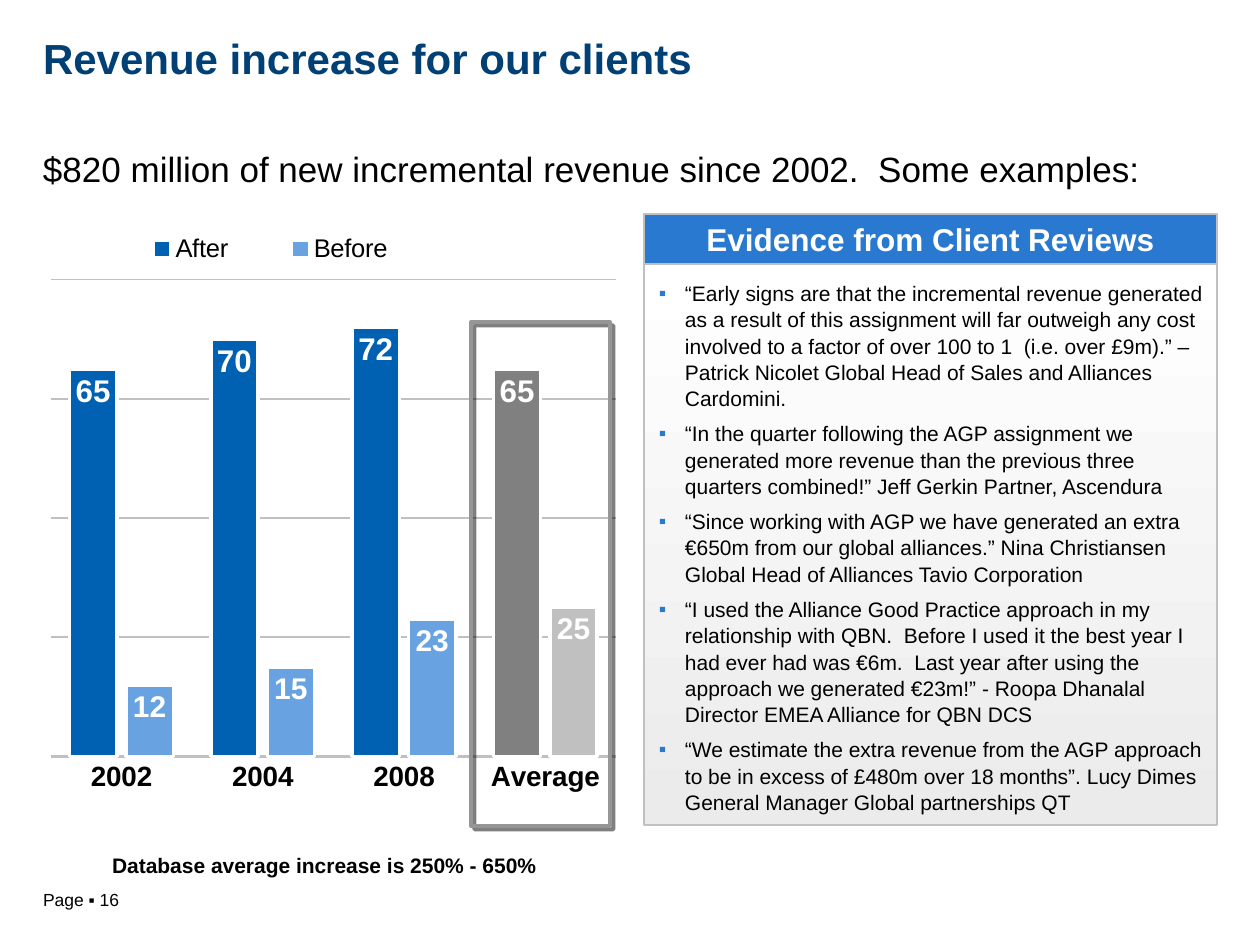
from pptx import Presentation
from pptx.chart.data import CategoryChartData
from pptx.dml.color import RGBColor
from pptx.enum.chart import XL_CHART_TYPE, XL_LABEL_POSITION, XL_LEGEND_POSITION, XL_TICK_LABEL_POSITION, XL_TICK_MARK
from pptx.enum.shapes import MSO_SHAPE
from pptx.enum.text import MSO_ANCHOR, PP_ALIGN
from pptx.oxml import parse_xml
from pptx.oxml.ns import nsdecls
from pptx.util import Pt

RECT = MSO_SHAPE.RECTANGLE
MIDDLE, TOP = MSO_ANCHOR.MIDDLE, MSO_ANCHOR.TOP
LEFT, CENTER = PP_ALIGN.LEFT, PP_ALIGN.CENTER
NO_TICK = XL_TICK_MARK.NONE
FONT = "Arial"
SCALE = 914400 / 126
COLORS = {
    "black": "000000", "white": "FFFFFF", "title": "004074", "header": "2A79D0",
    "rule": "C0C0C0", "frame": "969696", "panel_end": "EBEBEB",
    "after": "0061B2", "before": "69A2E1", "after_avg": "808080", "before_avg": "C0C0C0",
}
YEARS = ["2002", "2004", "2008", "Average"]
SERIES = [
    ("After", [65, 70, 72, 65], "after", "after_avg", 17.9),
    ("Before", [12, 15, 23, 25], "before", "before_avg", 17.1),
]
QUOTES = [
    "“Early signs are that the incremental revenue generated as a result of this assignment will far outweigh "
    "any cost involved to a factor of over 100 to 1  (i.e. over £9m).” – Patrick Nicolet Global Head of Sales "
    "and Alliances Cardomini.",
    "“In the quarter following the AGP assignment we generated more revenue than the previous three quarters "
    "combined!” Jeff Gerkin Partner, Ascendura",
    "“Since working with AGP we have generated an extra €650m from our global alliances.” Nina Christiansen "
    "Global Head of Alliances Tavio Corporation",
    "“I used the Alliance Good Practice approach in my relationship with QBN.  Before I used it the best year I "
    "had ever had was €6m.  Last year after using the approach we generated €23m!” - Roopa Dhanalal Director "
    "EMEA Alliance for QBN DCS",
    "“We estimate the extra revenue from the AGP approach to be in excess of £480m over 18 months”. Lucy Dimes "
    "General Manager Global partnerships QT",
]


def px(n):
    return round(n * SCALE)


def rgb(name):
    return RGBColor.from_string(COLORS[name])


def style_font(font, size, color, bold=False):
    font.name, font.size, font.bold = FONT, Pt(size), bold
    font.color.rgb = rgb(color)


def style_line(line, color, width):
    line.color.rgb = rgb(color)
    line.width = Pt(width)


def set_frame(tf, insets, anchor, wrap=True):
    tf.word_wrap, tf.vertical_anchor = wrap, anchor
    tf.margin_left, tf.margin_top, tf.margin_right, tf.margin_bottom = map(px, insets)


def add_text(s, box, text, size, color="black", bold=False, insets=(0, 0, 0, 0), anchor=MIDDLE, wrap=True):
    tf = s.shapes.add_textbox(*map(px, box)).text_frame
    set_frame(tf, insets, anchor, wrap)
    tf.text = text
    p = tf.paragraphs[0]
    style_font(p.runs[0].font, size, color, bold)
    return p


def add_rect(s, box, line_color, line_width):
    sp = s.shapes.add_shape(RECT, *map(px, box))
    sp.shadow.inherit = False
    style_line(sp.line, line_color, line_width)
    return sp


def add_header(s, box, text):
    sp = add_rect(s, box, "rule", 1)
    sp.fill.solid()
    sp.fill.fore_color.rgb = rgb("header")
    set_frame(sp.text_frame, (0, 0, 0, 0), MIDDLE)
    sp.text_frame.text = text
    p = sp.text_frame.paragraphs[0]
    p.alignment = CENTER
    style_font(p.runs[0].font, 18, "white", True)


def add_bullet(p):
    pPr = p._p.get_or_add_pPr()
    pPr.set("marL", str(px(26)))
    pPr.set("indent", str(-px(26)))
    pPr.append(parse_xml(f'<a:buClr {nsdecls("a")}><a:srgbClr val="{COLORS["header"]}"/></a:buClr>'))
    pPr.append(parse_xml(f'<a:buFont {nsdecls("a")} typeface="{FONT}"/>'))
    pPr.append(parse_xml(f'<a:buChar {nsdecls("a")} char="▪"/>'))


def add_quotes(s, box):
    sp = add_rect(s, box, "rule", 1)
    sp.fill.gradient()
    sp.fill.gradient_angle = 270
    for stop, position, color in zip(sp.fill.gradient_stops, (0, 1), ("white", "panel_end")):
        stop.position = position
        stop.color.rgb = rgb(color)
    tf = sp.text_frame
    set_frame(tf, (15, 15, 10, 10), TOP)
    for i, quote in enumerate(QUOTES):
        p = tf.paragraphs[0] if i == 0 else tf.add_paragraph()
        p.text = quote
        add_bullet(p)
        p.alignment, p.line_spacing = LEFT, 1.05
        if i:
            p.space_before = Pt(4.8)
        style_font(p.runs[0].font, 12, "black")


def add_highlight(s, box):
    sp = add_rect(s, box, "frame", 2.25)
    sp.fill.background()
    effects = sp._element.spPr.find("{*}effectLst")
    effects.append(parse_xml(
        f'<a:outerShdw {nsdecls("a")} blurRad="0" dist="{Pt(2.8)}" dir="2700000" algn="ctr" rotWithShape="0">'
        '<a:srgbClr val="000000"><a:alpha val="50000"/></a:srgbClr></a:outerShdw>'))


def manual_layout(x, y, w, h, inner=False):
    target = '<c:layoutTarget val="inner"/>' if inner else ""
    sizes = "".join(f'<c:{k} val="{v}"/>' for k, v in zip("xywh", (x, y, w, h)))
    return parse_xml(f'<c:layout {nsdecls("c")}><c:manualLayout>{target}<c:xMode val="edge"/>'
                     f'<c:yMode val="edge"/>{sizes}</c:manualLayout></c:layout>')


def place_chart_parts(chart):
    plot_area = chart.element.xpath("c:chart/c:plotArea")[0]
    legend = chart.element.xpath("c:chart/c:legend")[0]
    for part in (plot_area, legend):
        for old in part.findall("{*}layout"):
            part.remove(old)
    plot_area.insert(0, manual_layout(0.03, 0.095, 0.95, 0.787, True))
    legend.find("{*}legendPos").addnext(manual_layout(0.11, 0.01, 0.58, 0.07))


def style_series(series, color, average_color, size):
    points = [(series, color), (series.points[len(YEARS) - 1], average_color)]
    for item, fill_color in points:
        item.format.fill.solid()
        item.format.fill.fore_color.rgb = rgb(fill_color)
        style_line(item.format.line, "white", 2)
    labels = series.data_labels
    labels.show_value = True
    labels.position = XL_LABEL_POSITION.INSIDE_END
    labels.number_format, labels.number_format_is_linked = "0", False
    style_font(labels.font, size, "white", True)


def add_revenue_chart(s, box):
    data = CategoryChartData()
    data.categories = YEARS
    for name, values, *_ in SERIES:
        data.add_series(name, values)
    chart = s.shapes.add_chart(XL_CHART_TYPE.COLUMN_CLUSTERED, *map(px, box), data).chart
    chart.has_title = False
    style_font(chart.font, 12.9, "black", True)
    chart.has_legend = True
    chart.legend.position = XL_LEGEND_POSITION.TOP
    chart.legend.include_in_layout = False
    style_font(chart.legend.font, 14.6, "black")
    plot = chart.plots[0]
    plot.gap_width, plot.overlap, plot.vary_by_categories = 80, -20, False
    for series, (_, _, color, average_color, size) in zip(plot.series, SERIES):
        style_series(series, color, average_color, size)
    years, values = chart.category_axis, chart.value_axis
    years.major_tick_mark = NO_TICK
    style_font(years.tick_labels.font, 15.9, "black", True)
    style_line(years.format.line, "rule", 2)
    values.minimum_scale, values.maximum_scale, values.major_unit = 0, 80, 20
    values.major_tick_mark = NO_TICK
    values.tick_label_position = XL_TICK_LABEL_POSITION.NONE
    values.format.line.fill.background()
    style_line(values.major_gridlines.format.line, "rule", 1)
    place_chart_parts(chart)


def main():
    prs = Presentation()
    prs.slide_width, prs.slide_height = px(1260), px(945)
    s = prs.slides.add_slide(prs.slide_layouts[6])
    add_text(s, (30, 883, 185, 34), "Page ▪ 16", 10, insets=(13, 6, 13, 6), anchor=TOP)
    title = add_text(s, (43, 19, 861, 83), "Revenue increase for our clients", 24, "title", True, (0, 6, 0, 6))
    title.line_spacing = 0.95
    add_text(s, (43, 144, 1172, 49), "$820 million of new incremental revenue since 2002.  Some examples:", 20)
    add_revenue_chart(s, (33, 222, 595, 606))
    add_header(s, (644, 214, 573, 50), "Evidence from Client Reviews")
    add_quotes(s, (644, 264, 573, 561))
    add_highlight(s, (471, 322, 139, 504))
    add_text(s, (99, 847, 459, 38), "Database average increase is 250% - 650%", 12, bold=True,
             insets=(13, 6, 13, 6), anchor=TOP, wrap=False)
    prs.save("out.pptx")


if __name__ == "__main__":
    main()
